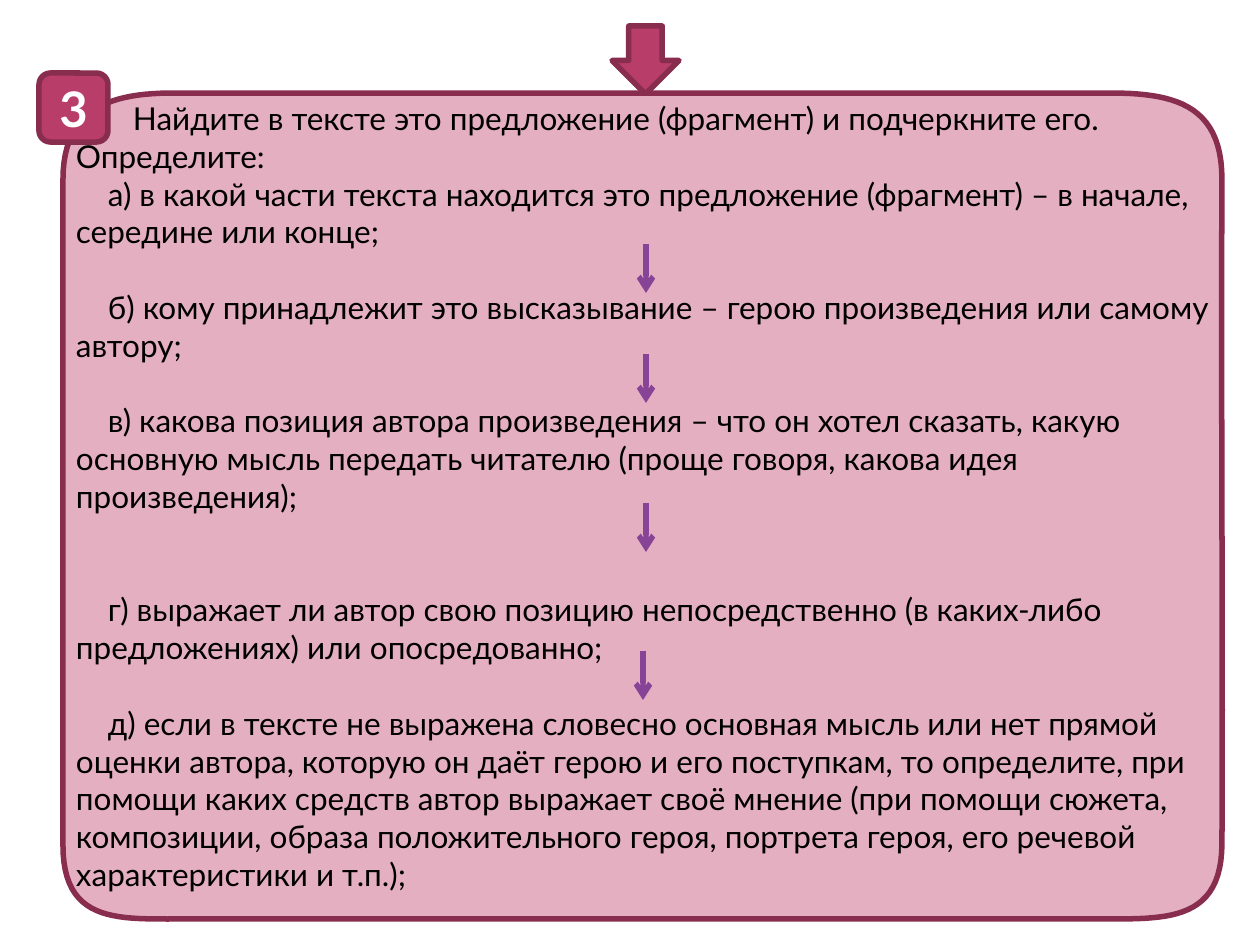
from lxml import etree
from pptx import Presentation
from pptx import util as u
from pptx.dml.color import RGBColor
from pptx.enum import shapes, text
from pptx.oxml.ns import qn

SCALE = 914400 / 126
HUES = {"rose": "B83D68", "wine": "882D4D", "pink": "E5AFC2",
        "plum": "874396", "ink": "000000", "white": "FFFFFF"}
FONT = "Lato"
LEFT, RIGHT, TOP, BASE = 63, 1222, 93, 919
STEPS = [
    ("Найдите в тексте это предложение (фрагмент) и подчеркните его.", 57, 0),
    ("Определите:", 0, 0),
    ("а) в какой части текста находится это предложение (фрагмент) – в начале, "
     "середине или конце;", 32, 0),
    ("б) кому принадлежит это высказывание – герою произведения или самому автору;", 32, 1),
    ("в) какова позиция автора произведения – что он хотел сказать, какую основную "
     "мысль передать читателю (проще говоря, какова идея произведения);", 32, 1),
    ("г) выражает ли автор свою позицию непосредственно (в каких-либо предложениях) "
     "или опосредованно;", 32, 2),
    ("д) если в тексте не выражена словесно основная мысль или нет прямой оценки автора, "
     "которую он даёт герою и его поступкам, то определите, при помощи каких средств автор "
     "выражает своё мнение (при помощи сюжета, композиции, образа положительного героя, "
     "портрета героя, его речевой характеристики и т.п.);", 32, 1),
]


def px(num):
    return u.Emu(round(num * SCALE))


def hue(name):
    return RGBColor.from_string(HUES[name])


def write(para, words, size=18, color="ink", bold=False, align=text.PP_ALIGN.LEFT,
          indent=0, gap=0):
    para.alignment = align
    para.space_before = u.Pt(gap)
    if indent:
        para._p.get_or_add_pPr().set("indent", str(px(indent)))
    run = para.add_run()
    run.text = words
    font = run.font
    font.name, font.size, font.bold = FONT, u.Pt(size), bold
    font.color.rgb = hue(color)


def curve(start, ctrl, end, count=24):
    (ax, ay), (bx, by), (cx, cy), (dx, dy) = start, *ctrl, end
    dots = []
    for i in range(1, count + 1):
        t = i / count
        s = 1 - t
        mix = (s ** 3, 3 * s * s * t, 3 * s * t * t, t ** 3)
        dots.append((sum(m * v for m, v in zip(mix, (ax, bx, cx, dx))),
                     sum(m * v for m, v in zip(mix, (ay, by, cy, dy)))))
    return dots


class Deck:
    def __init__(self, wide, high):
        self.prs = Presentation()
        self.prs.slide_width, self.prs.slide_height = px(wide), px(high)
        self.slide = self.prs.slides.add_slide(self.prs.slide_layouts[6])
        self.edge = 3.15

    def paint(self, shape, fill):
        shape.shadow.inherit = False
        shape.fill.solid()
        shape.fill.fore_color.rgb = hue(fill)
        shape.line.color.rgb = hue("wine")
        shape.line.width = u.Pt(self.edge)
        return shape

    def block(self, kind, x, y, w, h):
        shape = self.slide.shapes.add_shape(kind, px(x), px(y), px(w), px(h))
        return self.paint(shape, "rose")

    def panel(self, dots):
        first, *rest = [(px(x), px(y)) for x, y in dots]
        form = self.slide.shapes.build_freeform(*first, scale=1.0)
        form.add_line_segments(rest, close=True)
        return self.paint(form.convert_to_shape(), "pink")

    def arrow(self, x, y, size):
        line = self.slide.shapes.add_connector(
            shapes.MSO_CONNECTOR.STRAIGHT, px(x), px(y), px(x), px(y + size))
        line.line.color.rgb = hue("plum")
        line.line.width = u.Pt(3)
        tail = etree.SubElement(line.line._get_or_add_ln(), qn("a:tailEnd"))
        tail.set("type", "arrow")
        etree.SubElement(line._element.spPr, qn("a:effectLst"))


def outline():
    dots = [(LEFT, 180)]
    dots += curve(dots[-1], ((LEFT, 105), (115, TOP)), (175, TOP))
    dots.append((1108, TOP))
    dots += curve(dots[-1], ((1170, TOP), (RIGHT, 102)), (RIGHT, 179))
    dots += curve(dots[-1], ((RIGHT - 1, 379), (RIGHT + 1, 641)), (RIGHT, 843))
    dots += curve(dots[-1], ((RIGHT, BASE), (1170, BASE)), (1108, BASE))
    dots.append((175, BASE))
    dots += curve(dots[-1], ((115, BASE), (LEFT, BASE + 2)), (LEFT, 845))
    return dots


def main():
    deck = Deck(1260, 945)
    deck.block(shapes.MSO_SHAPE.DOWN_ARROW, 612, 26, 67, 68)

    frame = deck.panel(outline()).text_frame
    frame.word_wrap = True
    frame.vertical_anchor = text.MSO_ANCHOR.TOP
    frame.margin_left, frame.margin_right = px(13), px(8)
    frame.margin_top = frame.margin_bottom = px(6)
    for i, (words, indent, gap) in enumerate(STEPS):
        para = frame.add_paragraph() if i else frame.paragraphs[0]
        write(para, words, indent=indent, gap=gap * 21.6)

    badge = deck.block(shapes.MSO_SHAPE.ROUNDED_RECTANGLE, 39, 73, 69, 69).text_frame
    badge.vertical_anchor = text.MSO_ANCHOR.MIDDLE
    write(badge.paragraphs[0], "3", size=28, color="white", bold=True,
          align=text.PP_ALIGN.CENTER)

    for x, y in ((646, 244), (646, 354), (646, 503), (643, 651)):
        deck.arrow(x, y, 49)
    deck.prs.save("out.pptx")


if __name__ == "__main__":
    main()
